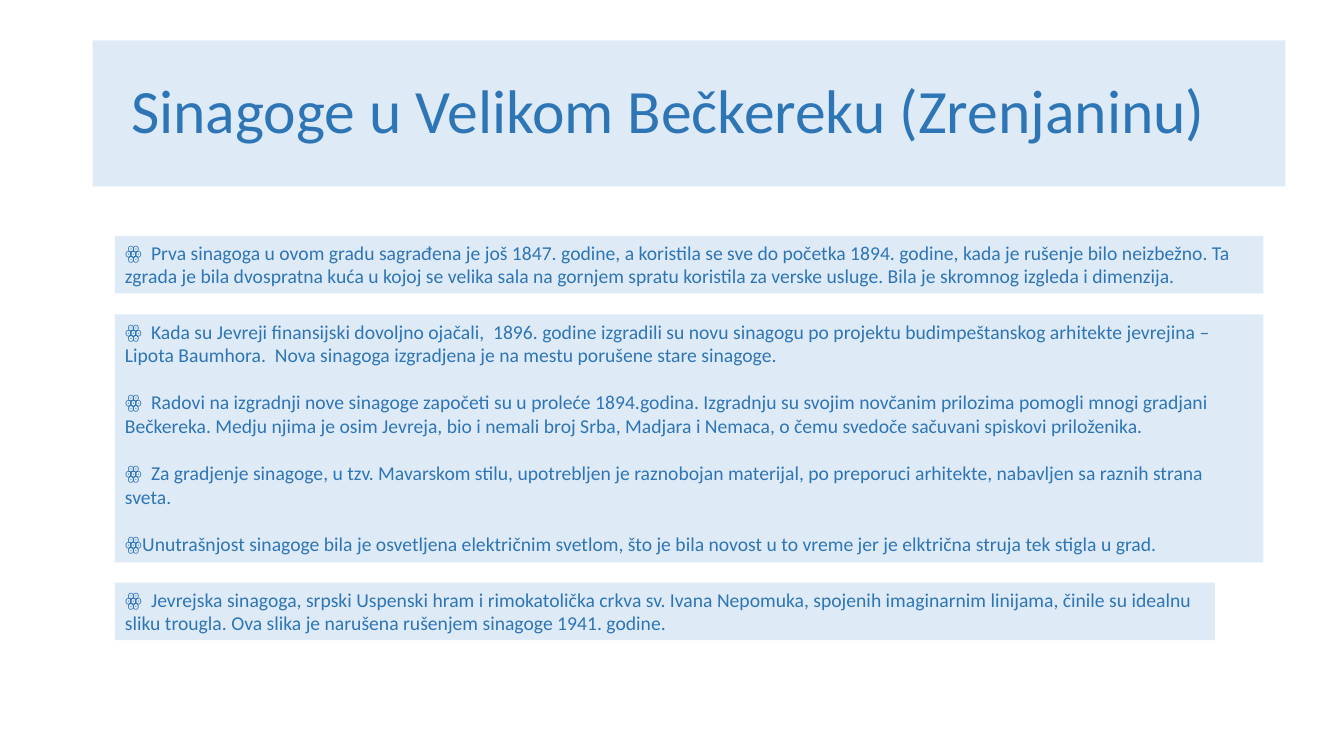
from pptx import Presentation
from pptx.dml.color import RGBColor
from pptx.enum import text
from pptx.util import Inches, Pt

PALE_BLUE = RGBColor(0xDE, 0xEB, 0xF7)
BLUE = RGBColor(0x2E, 0x75, 0xB6)

TITLE = "Sinagoge u Velikom Bečkereku (Zrenjaninu)"
FIRST_SYNAGOGUE = [
    "ꙮ  Prva sinagoga u ovom gradu sagrađena je još 1847. godine, a koristila se sve do "
    "početka 1894. godine, kada je rušenje bilo neizbežno. Ta zgrada je bila dvospratna kuća "
    "u kojoj se velika sala na gornjem spratu koristila za verske usluge. Bila je skromnog "
    "izgleda i dimenzija.",
]
NEW_SYNAGOGUE = [
    "ꙮ  Kada su Jevreji finansijski dovoljno ojačali,  1896. godine izgradili su novu sinagogu "
    "po projektu budimpeštanskog arhitekte jevrejina – Lipota Baumhora.  Nova sinagoga "
    "izgradjena je na mestu porušene stare sinagoge.",
    "ꙮ  Radovi na izgradnji nove sinagoge započeti su u proleće 1894.godina. Izgradnju su svojim "
    "novčanim prilozima pomogli mnogi gradjani Bečkereka. Medju njima je osim Jevreja, bio i "
    "nemali broj Srba, Madjara i Nemaca, o čemu svedoče sačuvani spiskovi priloženika.",
    "ꙮ  Za gradjenje sinagoge, u tzv. Mavarskom stilu, upotrebljen je raznobojan materijal, po "
    "preporuci arhitekte, nabavljen sa raznih strana sveta.",
    "ꙮUnutrašnjost sinagoge bila je osvetljena električnim svetlom, što je bila novost u to "
    "vreme jer je elktrična struja tek stigla u grad.",
]
DEMOLITION = [
    "ꙮ  Jevrejska sinagoga, srpski Uspenski hram i rimokatolička crkva sv. Ivana Nepomuka, "
    "spojenih imaginarnim linijama, činile su idealnu sliku trougla. Ova slika je narušena "
    "rušenjem sinagoge 1941. godine.",
]


def add_panel(s, left, top, width, height, paragraphs, size):
    sp = s.shapes.add_textbox(Inches(left), Inches(top), Inches(width), Inches(height))
    sp.fill.solid()
    sp.fill.fore_color.rgb = PALE_BLUE
    tf = sp.text_frame
    tf.word_wrap = True
    for i, line in enumerate(paragraphs):
        p = tf.add_paragraph() if i else tf.paragraphs[0]
        p.text = line
        p.font.name = "Calibri"
        p.font.size = Pt(size)
        p.font.color.rgb = BLUE
        if i:
            p.space_before = Pt(17)
    return tf


def add_title(s):
    tf = add_panel(s, 0.92, 0.4, 11.83, 1.45, [TITLE], 44)
    tf.vertical_anchor = text.MSO_ANCHOR.MIDDLE
    tf.margin_left = Inches(0.38)
    tf.paragraphs[0].line_spacing = 0.9


def main():
    prs = Presentation()
    prs.slide_width, prs.slide_height = Inches(13.33), Inches(7.5)
    s = prs.slides.add_slide(prs.slide_layouts[6])
    add_title(s)
    for top, width, height, paragraphs in (
        (2.34, 11.39, 0.57, FIRST_SYNAGOGUE),
        (3.12, 11.39, 2.46, NEW_SYNAGOGUE),
        (5.78, 10.91, 0.57, DEMOLITION),
    ):
        tf = add_panel(s, 1.14, top, width, height, paragraphs, 14)
        tf.auto_size = text.MSO_AUTO_SIZE.SHAPE_TO_FIT_TEXT
    prs.save("out.pptx")


if __name__ == "__main__":
    main()
